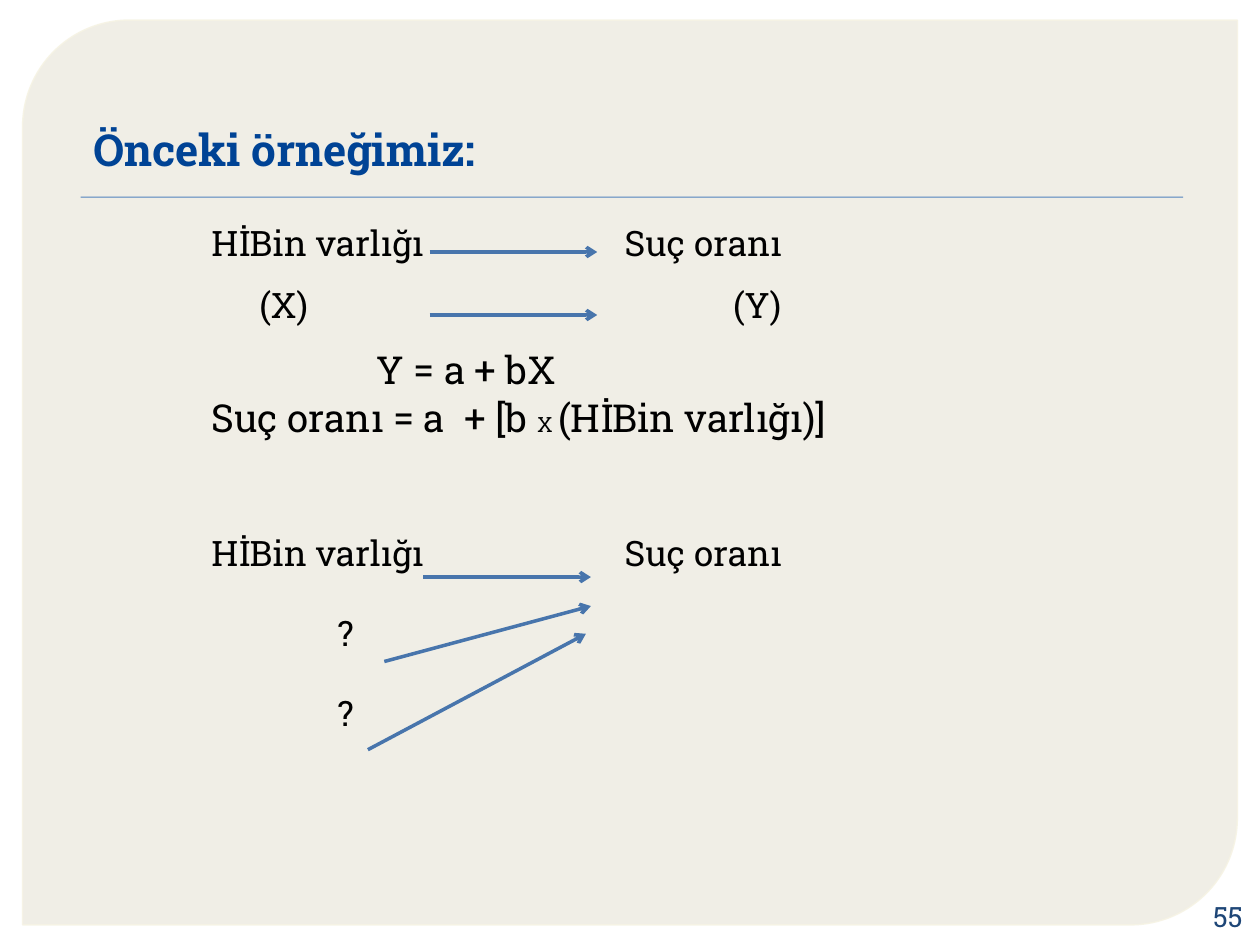
from dataclasses import dataclass

from lxml.etree import SubElement
from pptx import Presentation
from pptx.dml.color import RGBColor
from pptx.enum.shapes import MSO_CONNECTOR, MSO_SHAPE
from pptx.enum.text import MSO_ANCHOR, PP_ALIGN
from pptx.oxml.ns import qn
from pptx.util import Inches, Pt


@dataclass(frozen=True)
class Theme:
    font: str = "Roboto Slab"
    panel: str = "E8E6D9"
    panel_edge: str = "F6F3E4"
    rule: str = "4F81BD"
    title: str = "004395"
    body: str = "000000"
    number: str = "1E4677"
    arrow: str = "4875AC"
    title_size: float = 25.2
    body_size: float = 20
    formula_size: float = 22
    times_size: float = 12
    number_size: float = 16


THEME = Theme()

# Text, size, space before in points, tab stops in inches
BODY_LINES = [
    ("\tHİBin varlığı\tSuç oranı", THEME.body_size, 0, (1, 4.28)),
    ("\t(X)\t(Y)", THEME.body_size, 11.3, (1.38, 5.14)),
    ("\tY = a + bX", THEME.formula_size, 11.6, (2.31,)),
    ("\tSuç oranı = a  + [b ", THEME.formula_size, 1.3, (1,)),
    ("\tHİBin varlığı\tSuç oranı", THEME.body_size, 52, (1, 4.28)),
    ("\t?", THEME.body_size, 21.6, (2,)),
    ("\t?", THEME.body_size, 21.6, (2,)),
]
FORMULA_LINE = 3
FORMULA_TAIL = [("X ", THEME.times_size), ("(HİBin varlığı)]", THEME.formula_size)]

ARROWS = [
    ((3.41, 2), (4.74, 2)),
    ((3.41, 2.5), (4.74, 2.5)),
    ((3.36, 4.58), (4.69, 4.58)),
    ((3.05, 5.25), (4.69, 4.81)),
    ((2.92, 5.95), (4.65, 5.03)),
]


def inches(box):
    return [Inches(length) for length in box]


def format_runs(para, size, color, bold=False):
    for span in para.runs:
        span.font.name = THEME.font
        span.font.size = Pt(size)
        span.font.bold = bold
        span.font.color.rgb = RGBColor.from_string(color)


def set_opacity(fill_owner, percent):
    color = next(fill_owner.iter(qn("a:srgbClr")))
    SubElement(color, qn("a:alpha"), val=str(percent * 1000))


def set_tab_stops(para, stops):
    tabs = SubElement(para._p.get_or_add_pPr(), qn("a:tabLst"))
    for stop in stops:
        SubElement(tabs, qn("a:tab"), pos=str(Inches(stop)), algn="l")


def add_panel(page, box):
    panel = page.shapes.add_shape(MSO_SHAPE.ROUND_2_DIAG_RECTANGLE, *inches(box))
    panel.adjustments[0] = 0.118
    panel.adjustments[1] = 0
    panel.shadow.inherit = False
    panel.fill.solid()
    panel.fill.fore_color.rgb = RGBColor.from_string(THEME.panel)
    panel.line.color.rgb = RGBColor.from_string(THEME.panel_edge)
    panel.line.width = Pt(0.87)
    properties = panel._element.spPr
    set_opacity(properties.find(qn("a:solidFill")), 65)
    set_opacity(properties.find(qn("a:ln")), 88)
    # Behind the title placeholder, after the two group property elements
    page.shapes._spTree.insert(2, panel._element)


def add_rule(page, box):
    rule = page.shapes.add_shape(MSO_SHAPE.RECTANGLE, *inches(box))
    rule.shadow.inherit = False
    rule.fill.solid()
    rule.fill.fore_color.rgb = RGBColor.from_string(THEME.rule)
    rule.line.fill.background()


def place_title(page, box):
    title = page.shapes.title
    title.left, title.top, title.width, title.height = inches(box)
    frame = title.text_frame
    frame.text = "Önceki örneğimiz:"
    frame.vertical_anchor = MSO_ANCHOR.BOTTOM
    frame.margin_left = Inches(0.16)
    frame.margin_bottom = Inches(0.45)
    frame.paragraphs[0].alignment = PP_ALIGN.LEFT
    format_runs(frame.paragraphs[0], THEME.title_size, THEME.title, bold=True)


def add_body(page, box):
    frame = page.shapes.add_textbox(*inches(box)).text_frame
    frame.word_wrap = True
    frame.margin_top = Inches(0.08)
    for index, (text, size, space, stops) in enumerate(BODY_LINES):
        para = frame.add_paragraph() if index else frame.paragraphs[0]
        para.text = text
        para.space_before = Pt(space)
        set_tab_stops(para, stops)
        format_runs(para, size, THEME.body)
    formula = frame.paragraphs[FORMULA_LINE]
    for text, size in FORMULA_TAIL:
        span = formula.add_run()
        span.text = text
    format_runs(formula, THEME.formula_size, THEME.body)
    for span, (text, size) in zip(formula.runs[-len(FORMULA_TAIL):], FORMULA_TAIL):
        span.font.size = Pt(size)


def add_arrow(page, start, end):
    arrow = page.shapes.add_connector(
        MSO_CONNECTOR.STRAIGHT, *inches(start), *inches(end))
    arrow.line.color.rgb = RGBColor.from_string(THEME.arrow)
    arrow.line.width = Pt(2)
    SubElement(arrow.line._get_or_add_ln(), qn("a:tailEnd"), type="arrow")
    SubElement(arrow._element.spPr, qn("a:effectLst"))


def add_page_number(page, box):
    frame = page.shapes.add_textbox(*inches(box)).text_frame
    frame.word_wrap = True
    frame.vertical_anchor = MSO_ANCHOR.MIDDLE
    frame.text = "55"
    frame.paragraphs[0].alignment = PP_ALIGN.RIGHT
    format_runs(frame.paragraphs[0], THEME.number_size, THEME.number)


def main():
    deck = Presentation()
    deck.slide_width, deck.slide_height = Inches(10), Inches(7.5)
    page = deck.slides.add_slide(deck.slide_layouts[5])
    add_panel(page, (0.18, 0.16, 9.64, 7.18))
    add_rule(page, (0.64, 1.56, 8.75, 0.01))
    place_title(page, (0.58, 0.92, 9, 0.92))
    add_body(page, (0.58, 1.68, 9, 5.7))
    add_page_number(page, (9.45, 7.12, 0.51, 0.3))
    for start, end in ARROWS:
        add_arrow(page, start, end)
    deck.save("out.pptx")


if __name__ == "__main__":
    main()
